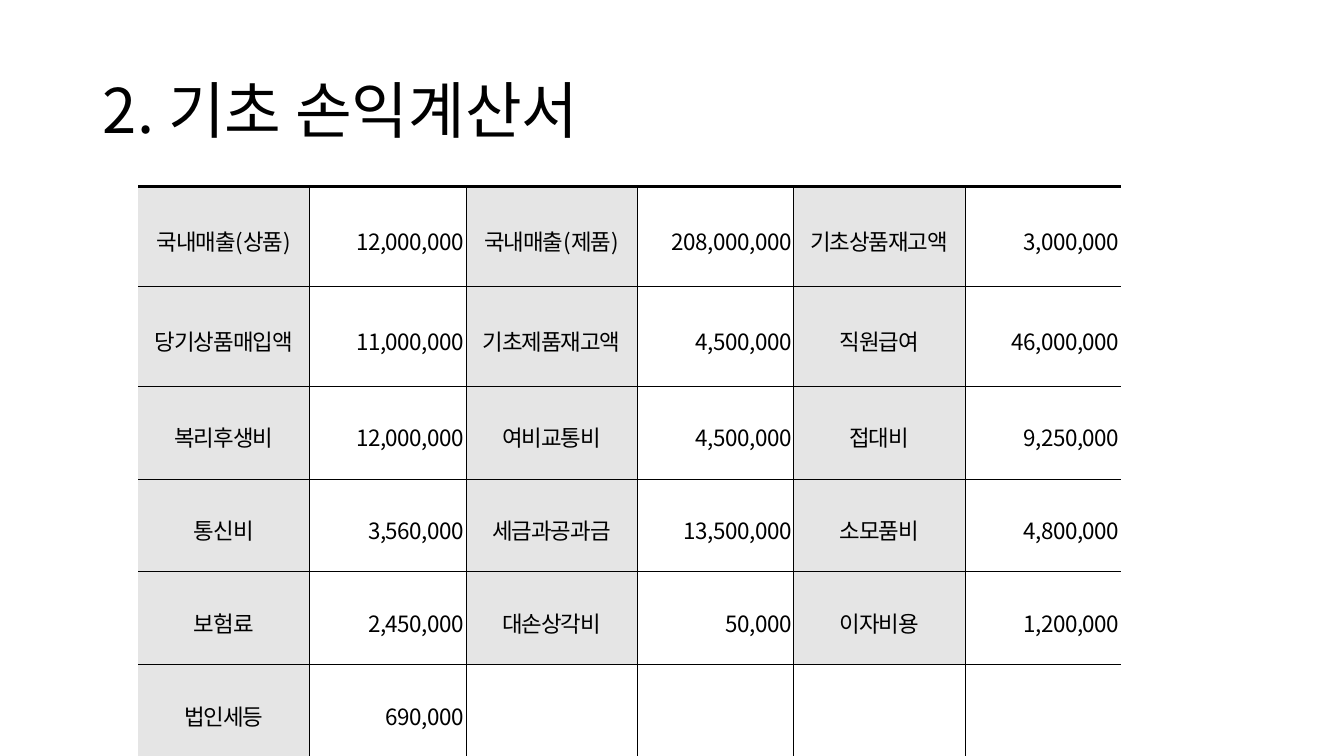
from dataclasses import dataclass

from lxml.etree import SubElement
from pptx import Presentation
from pptx.dml.color import RGBColor
from pptx.enum.text import MSO_ANCHOR as Anchor, PP_ALIGN as Align
from pptx.oxml.ns import qn
from pptx.util import Inches, Pt

BLACK = RGBColor(0x00, 0x00, 0x00)
GRAY = RGBColor(0xE5, 0xE5, 0xE5)
FONT = "Noto Sans CJK KR"
THIN, THICK = 0.25, 1.7
WIDTHS = [1.7, 1.55] * 3
HEIGHTS = [0.99] * 2 + [0.92] * 4


@dataclass
class Item:
    name: str
    value: str


@dataclass
class Style:
    align: Align
    track: int


LABEL = Style(Align.CENTER, -70)
AMOUNT = Style(Align.RIGHT, -30)

ITEMS = [
    Item("국내매출(상품)", "12,000,000"),
    Item("국내매출(제품)", "208,000,000"),
    Item("기초상품재고액", "3,000,000"),
    Item("당기상품매입액", "11,000,000"),
    Item("기초제품재고액", "4,500,000"),
    Item("직원급여", "46,000,000"),
    Item("복리후생비", "12,000,000"),
    Item("여비교통비", "4,500,000"),
    Item("접대비", "9,250,000"),
    Item("통신비", "3,560,000"),
    Item("세금과공과금", "13,500,000"),
    Item("소모품비", "4,800,000"),
    Item("보험료", "2,450,000"),
    Item("대손상각비", "50,000"),
    Item("이자비용", "1,200,000"),
    Item("법인세등", "690,000"),
]


def set_font(run, size: float) -> None:
    run.font.size = Pt(size)
    run.font.name = FONT
    run.font.color.rgb = BLACK
    SubElement(run.font._element, qn("a:ea"), typeface=FONT)


def add_edge(cell, side: str, width: float) -> None:
    props = cell._tc.get_or_add_tcPr()
    line = SubElement(props, qn(f"a:ln{side}"), w=str(Pt(width)))
    if width:
        fill = SubElement(line, qn("a:solidFill"))
        SubElement(fill, qn("a:srgbClr"), val=str(BLACK))
    else:
        SubElement(line, qn("a:noFill"))


def add_edges(cell, row: int, col: int) -> None:
    add_edge(cell, "L", THIN if col > 0 else 0)
    add_edge(cell, "R", THIN if col < len(WIDTHS) - 1 else 0)
    add_edge(cell, "T", THIN if row > 0 else THICK)
    add_edge(cell, "B", THIN if row < len(HEIGHTS) - 1 else THICK)
    cell.fill.background()


def fill_cell(cell, text: str, style: Style) -> None:
    cell.text_frame.text = text
    cell.vertical_anchor = Anchor.MIDDLE
    cell.margin_left = cell.margin_right = Inches(0.02)
    cell.margin_top = cell.margin_bottom = Inches(0.02)
    para = cell.text_frame.paragraphs[0]
    para.alignment = style.align
    para.line_spacing = 1.3
    run = para.runs[0]
    set_font(run, 16)
    run.font._element.set("spc", str(style.track))


def add_title(slide) -> None:
    title = slide.shapes.title
    title.left, title.top = Inches(0.92), Inches(0.4)
    title.width, title.height = Inches(11.5), Inches(1.45)
    frame = title.text_frame
    frame.text = "2. 기초 손익계산서"
    frame.vertical_anchor = Anchor.MIDDLE
    para = frame.paragraphs[0]
    para.alignment = Align.LEFT
    para.line_spacing = 0.9
    set_font(para.runs[0], 44)


def add_sheet(slide) -> None:
    table = slide.shapes.add_table(
        len(HEIGHTS), len(WIDTHS), Inches(1.37), Inches(1.85),
        Inches(sum(WIDTHS)), Inches(sum(HEIGHTS)),
    ).table
    table.first_row = table.horz_banding = False
    for col, width in zip(table.columns, WIDTHS):
        col.width = Inches(width)
    for row, height in enumerate(HEIGHTS):
        table.rows[row].height = Inches(height)
        for col in range(len(WIDTHS)):
            add_edges(table.cell(row, col), row, col)
    for index, item in enumerate(ITEMS):
        row, pair = divmod(index, 3)
        label = table.cell(row, pair * 2)
        fill_cell(label, item.name, LABEL)
        label.fill.solid()
        label.fill.fore_color.rgb = GRAY
        fill_cell(table.cell(row, pair * 2 + 1), item.value, AMOUNT)


def main() -> None:
    deck = Presentation()
    deck.slide_width, deck.slide_height = Inches(13.33), Inches(7.5)
    slide = deck.slides.add_slide(deck.slide_layouts[5])
    add_title(slide)
    add_sheet(slide)
    deck.save("out.pptx")


if __name__ == "__main__":
    main()
